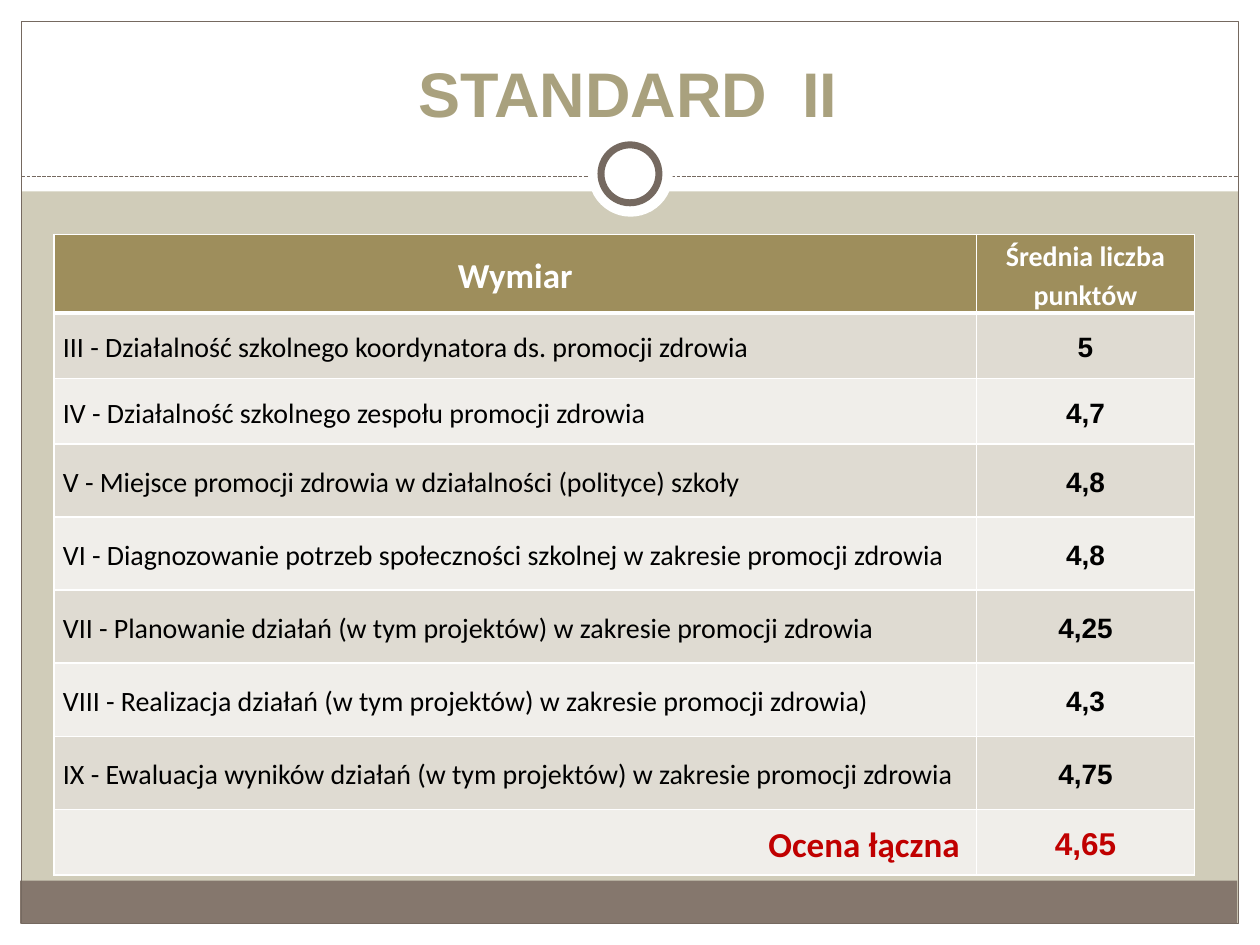
from lxml.etree import SubElement
from pptx import Presentation
from pptx.dml.color import RGBColor
from pptx.enum.dml import MSO_LINE
from pptx.enum.shapes import MSO_CONNECTOR, MSO_SHAPE
from pptx.enum.text import MSO_ANCHOR, PP_ALIGN
from pptx.oxml.ns import qn
from pptx.util import Inches, Pt

WHITE = RGBColor(0xFF, 0xFF, 0xFF)
BLACK = RGBColor(0x00, 0x00, 0x00)
SAND = RGBColor(0xD0, 0xCC, 0xB9)
BROWN = RGBColor(0x85, 0x77, 0x6D)
DARK_BROWN = RGBColor(0x75, 0x69, 0x60)
KHAKI = RGBColor(0xA9, 0xA1, 0x7E)
OLIVE = RGBColor(0x9E, 0x8E, 0x5C)
RED = RGBColor(0xC0, 0x00, 0x00)
BANDS = [RGBColor(0xF0, 0xEE, 0xEA), RGBColor(0xDF, 0xDB, 0xD2)]


def write(paragraph, text, align, **font_values):
    paragraph.alignment = align
    span = paragraph.add_run()
    span.text = text
    span.font.color.rgb = font_values.pop("color")
    for name, value in font_values.items():
        setattr(span.font, name, value)


def add_borders(cell, widths):
    # Border lines come before the fill in the cell properties
    properties = cell._tc.get_or_add_tcPr()
    for index, (side, width) in enumerate(zip("LRTB", widths)):
        border = SubElement(properties, qn(f"a:ln{side}"), w=str(Pt(width)))
        fill = SubElement(border, qn("a:solidFill"))
        SubElement(fill, qn("a:srgbClr"), val=str(WHITE))
        properties.insert(index, border)


deck = Presentation()
deck.slide_width, deck.slide_height = Inches(10), Inches(7.5)
page = deck.slides.add_slide(deck.slide_layouts[5])
page.background.fill.solid()
page.background.fill.fore_color.rgb = SAND

# Dashed line under the title, placed after the frame and before the ring
divider = page.shapes.add_connector(
    MSO_CONNECTOR.STRAIGHT, Inches(0.17), Inches(1.4), Inches(9.83), Inches(1.4))
divider.line.color.rgb = DARK_BROWN
divider.line.width = Pt(0.75)
divider.line.dash_style = MSO_LINE.SQUARE_DOT
SubElement(divider._element.spPr, qn("a:effectLst"))

# White margins, footer band, frame and ring: kind, box, fill, line width
decorations = [
    (MSO_SHAPE.RECTANGLE, (0, 7.33, 10, 0.17), WHITE, 0),
    (MSO_SHAPE.RECTANGLE, (0, 0, 10, 1.52), WHITE, 0),
    (MSO_SHAPE.RECTANGLE, (0, 0, 0.17, 7.5), WHITE, 0),
    (MSO_SHAPE.RECTANGLE, (9.83, 0, 0.17, 7.5), WHITE, 0),
    (MSO_SHAPE.RECTANGLE, (0.16, 6.99, 9.66, 0.34), BROWN, 0),
    (MSO_SHAPE.RECTANGLE, (0.17, 0.17, 9.66, 7.16), None, 0.75),
    (MSO_SHAPE.OVAL, (4.67, 1.05, 0.67, 0.67), WHITE, 0),
    (MSO_SHAPE.OVAL, (4.77, 1.15, 0.46, 0.46), WHITE, 4),
]
for kind, box, color, line_width in decorations:
    shape = page.shapes.add_shape(kind, *map(Inches, box))
    shape.shadow.inherit = False
    if color is None:
        shape.fill.background()
        shape._element.addnext(divider._element)
    else:
        shape.fill.solid()
        shape.fill.fore_color.rgb = color
    if line_width:
        shape.line.color.rgb = DARK_BROWN
        shape.line.width = Pt(line_width)
    else:
        shape.line.fill.background()

# Title, brought in front of the decorations
title = page.shapes.title
shape._element.addnext(title._element)
title.left, title.top, title.width, title.height = map(
    Inches, (0.2, 0.16, 9.57, 0.92))
title.text_frame.vertical_anchor = MSO_ANCHOR.BOTTOM
write(title.text_frame.paragraphs[0], "STANDARD  II", PP_ALIGN.CENTER,
      name="Arial", size=Pt(36), bold=True, color=KHAKI)

# Table of scores
rows = [
    ("Wymiar", "Średnia liczba punktów"),
    ("III - Działalność szkolnego koordynatora ds. promocji zdrowia", "5"),
    ("IV - Działalność szkolnego zespołu promocji zdrowia", "4,7"),
    ("V - Miejsce promocji zdrowia w działalności (polityce) szkoły", "4,8"),
    ("VI - Diagnozowanie potrzeb społeczności szkolnej w zakresie promocji zdrowia", "4,8"),
    ("VII - Planowanie działań (w tym projektów) w zakresie promocji zdrowia", "4,25"),
    ("VIII - Realizacja działań (w tym projektów) w zakresie promocji zdrowia)", "4,3"),
    ("IX - Ewaluacja wyników działań (w tym projektów) w zakresie promocji zdrowia", "4,75"),
    ("Ocena łączna ", "4,65"),
]
last = len(rows) - 1
table = page.shapes.add_table(
    len(rows), 2, *map(Inches, (0.43, 1.86, 9.06, 5.04))).table
table.columns[0].width, table.columns[1].width = Inches(7.32), Inches(1.73)

for r, texts in enumerate(rows):
    table.rows[r].height = Inches(0.58 if 3 <= r < last else 0.52)
    for c, text in enumerate(texts):
        cell = table.cell(r, c)
        cell.fill.solid()
        cell.fill.fore_color.rgb = BANDS[r % 2] if r else OLIVE
        cell.vertical_anchor = MSO_ANCHOR.MIDDLE
        cell.margin_left = cell.margin_right = Inches(0.07)
        cell.margin_top = cell.margin_bottom = 0
        add_borders(cell, (1, 1, 3 if r == 1 else 1, 3 if r == 0 else 1))

        align, size, color = PP_ALIGN.CENTER, 16, BLACK
        if r == 0:
            size, color = (20, 16)[c], WHITE
        elif r == last:
            size, color = (20, 18)[c], RED
        if c == 0 and r:
            align = PP_ALIGN.RIGHT if r == last else PP_ALIGN.LEFT
        para = cell.text_frame.paragraphs[0]
        para.line_spacing = 1.15
        write(para, text, align, name="Arial" if c and r else "Calibri",
              size=Pt(size), bold=c == 1 or r in (0, last), color=color)

deck.save("out.pptx")
